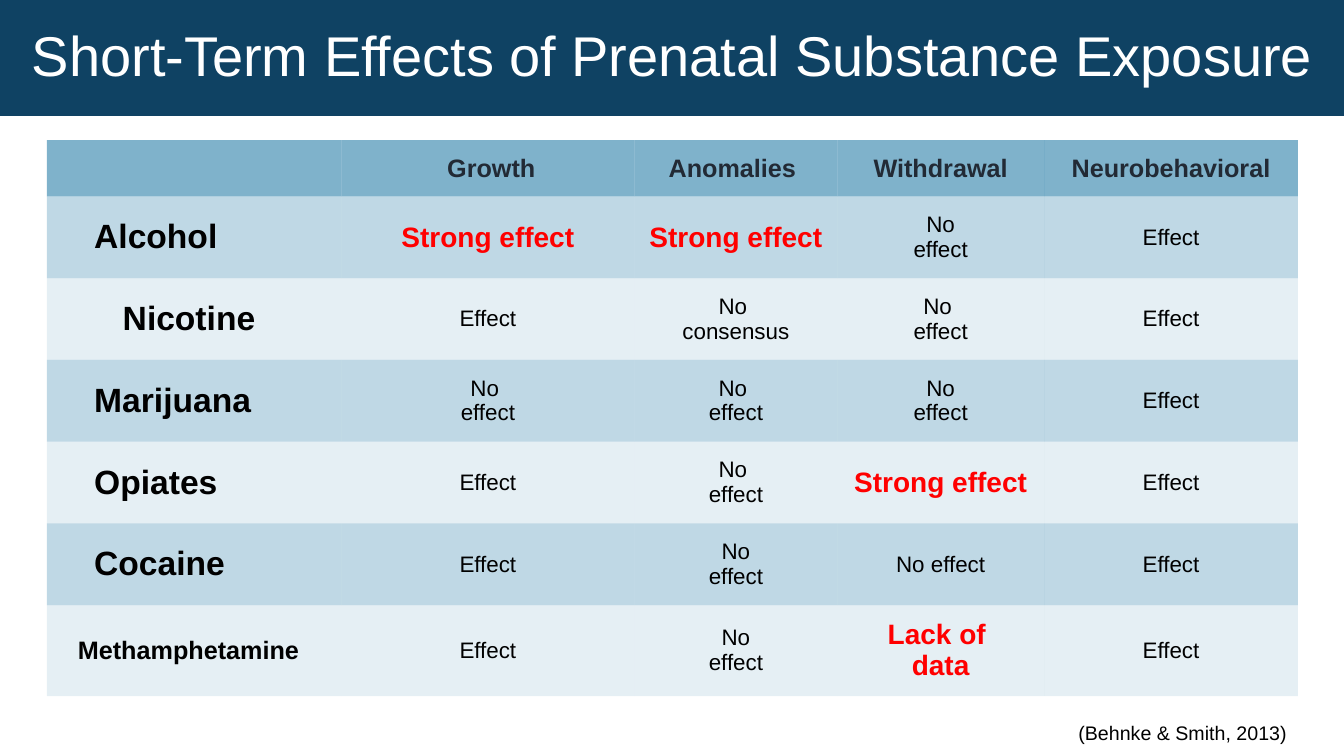
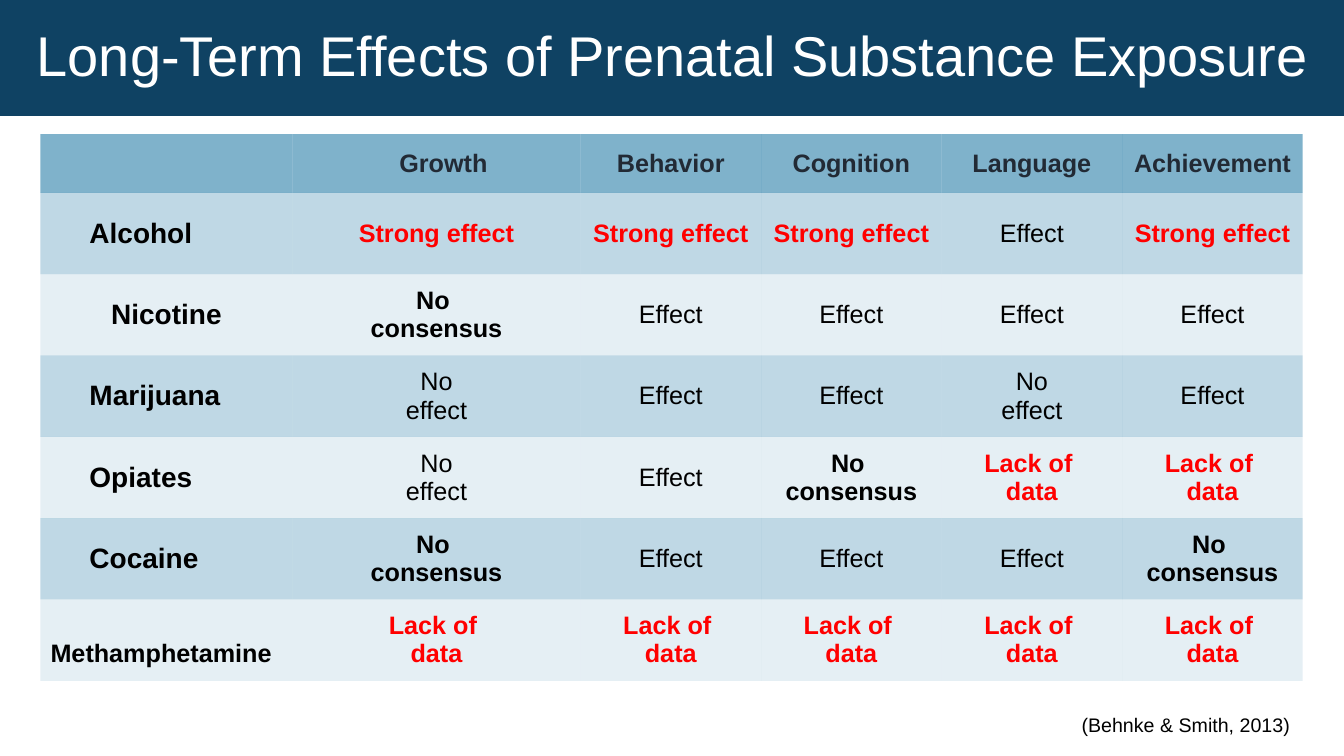
"""Build two slides of tables on the effects of prenatal substance exposure."""
from lxml.etree import SubElement
from pptx import Presentation
from pptx.dml.color import RGBColor
from pptx.enum.text import MSO_ANCHOR, MSO_AUTO_SIZE, PP_ALIGN
from pptx.oxml.ns import qn
from pptx.util import Cm, Pt

COLORS = {"band": "0F4263", "white": "FFFFFF", "cell": "006699",
          "header": "222A35", "text": "000000", "alert": "FF0000"}
FONT = "Arial"
PLAIN_STYLE = "{2D5ABB26-0587-4C30-8999-92F81FD0307C}"
HEADER_ALPHA, ROW_ALPHAS = 50, (25, 10)
GROWTH_INDENT = 0.35

STRONG, EFFECT = "Strong effect", "Effect"
NO, NO_SP = "No\neffect", "No \neffect"
MIXED, LACK = "No \nconsensus", "Lack of \ndata"
ALERTS = (STRONG, LACK)

SHORT_TERM = {
    "title": "Short-Term Effects of Prenatal Substance Exposure",
    "at": (1.18, 3.53), "cite_at": (26.92, 18.08),
    "widths": (7.42, 7.39, 5.11, 5.21, 6.4),
    "heights": (1.42,) + (2.06,) * 5 + (2.29,),
    "sizes": {"label": 24, "plain": 16, "alert": 20},
    "bold": ALERTS, "indent": 0.94, "last_indent": 0.53,
    "header": ("", "Growth ", "Anomalies ", "Withdrawal", "Neurobehavioral"),
    "rows": (
        ("Alcohol", STRONG, STRONG, NO, EFFECT),
        ("Nicotine", EFFECT, MIXED, NO_SP, EFFECT),
        ("Marijuana", NO_SP, NO_SP, NO, EFFECT),
        ("Opiates", EFFECT, NO_SP, STRONG, EFFECT),
        ("Cocaine", EFFECT, NO, "No effect", EFFECT),
        ("Methamphetamine", EFFECT, NO, LACK, EFFECT),
    ),
}
LONG_TERM = {
    "title": "Long-Term Effects of Prenatal Substance Exposure",
    "at": (1.02, 3.38), "cite_at": (27, 17.88),
    "widths": (6.35, 7.26) + (4.55,) * 4,
    "heights": (1.48,) + (2.05,) * 6,
    "sizes": {"label": 20, "plain": 18, "alert": 18},
    "bold": ALERTS + (MIXED,), "indent": 0.98, "last_indent": 0,
    "header": ("", "Growth", "Behavior", "Cognition", "Language", "Achievement"),
    "rows": (
        ("Alcohol", STRONG, STRONG, STRONG, EFFECT, STRONG),
        ("Nicotine", MIXED, EFFECT, EFFECT, EFFECT, EFFECT),
        ("Marijuana", NO, EFFECT, EFFECT, NO, EFFECT),
        ("Opiates", NO, EFFECT, MIXED, LACK, LACK),
        ("Cocaine", MIXED, EFFECT, EFFECT, EFFECT, MIXED),
        ("Methamphetamine", LACK, LACK, LACK, LACK, LACK),
    ),
}


def rgb(name):
    """Return the named colour."""
    return RGBColor.from_string(COLORS[name])


def style(p, size, color, bold=False, align=PP_ALIGN.CENTER, indent=0):
    """Format one paragraph."""
    if indent:
        p._p.get_or_add_pPr().set("marL", str(Cm(indent)))
    p.alignment = align
    p.font.name, p.font.size, p.font.bold = FONT, Pt(size), bold
    p.font.color.rgb = rgb(color)


def add_title(s, text):
    """Turn the title placeholder into the band across the top."""
    sp = s.shapes.title
    sp.left, sp.top, sp.width, sp.height = Cm(0), Cm(0), Cm(33.87), Cm(2.92)
    sp.fill.solid()
    sp.fill.fore_color.rgb = rgb("band")
    tf = sp.text_frame
    tf.text = text
    tf.auto_size = MSO_AUTO_SIZE.NONE
    tf.vertical_anchor = MSO_ANCHOR.MIDDLE
    tf.paragraphs[0].line_spacing = 0.9
    style(tf.paragraphs[0], 40, "white")


def add_citation(s, left, top):
    """Add the source of the findings below the table."""
    sp = s.shapes.add_textbox(Cm(left), Cm(top), Cm(5.77), Cm(0.74))
    tf = sp.text_frame
    tf.word_wrap = True
    tf.vertical_anchor = MSO_ANCHOR.MIDDLE
    tf.margin_left = tf.margin_right = tf.margin_top = tf.margin_bottom = Cm(0.08)
    tf.text = "(Behnke & Smith, 2013)"
    style(tf.paragraphs[0], 14, "text")


def fill_cell(cell, text, alpha, **look):
    """Write a cell on a translucent fill."""
    cell.fill.solid()
    cell.fill.fore_color.rgb = rgb("cell")
    clr = cell._tc.tcPr.find(".//" + qn("a:srgbClr"))
    SubElement(clr, qn("a:alpha")).set("val", str(alpha * 1000))
    cell.vertical_anchor = MSO_ANCHOR.MIDDLE
    cell.text = text
    for p in cell.text_frame.paragraphs:
        style(p, **look)


def add_label(cell, text, alpha, data):
    """Write the substance name that opens a row."""
    look = {"size": data["sizes"]["label"], "color": "text", "bold": True}
    if text == "Methamphetamine":
        look.update(size=18, align=PP_ALIGN.LEFT, indent=data["last_indent"])
    elif text != "Nicotine":
        look.update(align=PP_ALIGN.LEFT, indent=data["indent"])
    fill_cell(cell, text, alpha, **look)


def add_finding(cell, text, alpha, data):
    """Write one finding, in red where it stands out."""
    kind = "alert" if text in ALERTS else "plain"
    fill_cell(cell, text, alpha, size=data["sizes"][kind],
              color="alert" if kind == "alert" else "text",
              bold=text in data["bold"])


def add_effects_table(s, data):
    """Add the table of substances against effects and return it."""
    widths, heights = data["widths"], data["heights"]
    left, top = data["at"]
    table = s.shapes.add_table(len(heights), len(widths), Cm(left), Cm(top),
                               Cm(sum(widths)), Cm(sum(heights))).table
    table._tbl.tblPr.find(qn("a:tableStyleId")).text = PLAIN_STYLE
    table.first_row = table.horz_banding = False
    for col, width in zip(table.columns, widths):
        col.width = Cm(width)
    for row, height in zip(table.rows, heights):
        row.height = Cm(height)
    for c, text in enumerate(data["header"]):
        fill_cell(table.cell(0, c), text, HEADER_ALPHA, size=18, color="header",
                  bold=True, indent=GROWTH_INDENT if c == 1 else 0)
    for r, (label, *findings) in enumerate(data["rows"], 1):
        alpha = ROW_ALPHAS[(r - 1) % 2]
        add_label(table.cell(r, 0), label, alpha, data)
        for c, text in enumerate(findings, 1):
            add_finding(table.cell(r, c), text, alpha, data)
    return table


def add_slide(prs, data):
    """Add one slide with its title, table and citation."""
    s = prs.slides.add_slide(prs.slide_layouts[5])
    add_title(s, data["title"])
    table = add_effects_table(s, data)
    add_citation(s, *data["cite_at"])
    return table


def main():
    """Build and save the presentation."""
    prs = Presentation()
    prs.slide_width, prs.slide_height = Cm(33.87), Cm(19.05)
    short_table = add_slide(prs, SHORT_TERM)
    short_table.cell(2, 0).margin_left = Cm(0)
    long_table = add_slide(prs, LONG_TERM)
    last_label = long_table.cell(6, 0)
    last_label.vertical_anchor = MSO_ANCHOR.BOTTOM
    last_label.margin_bottom = Cm(0.32)
    prs.save("out.pptx")


if __name__ == "__main__":
    main()
